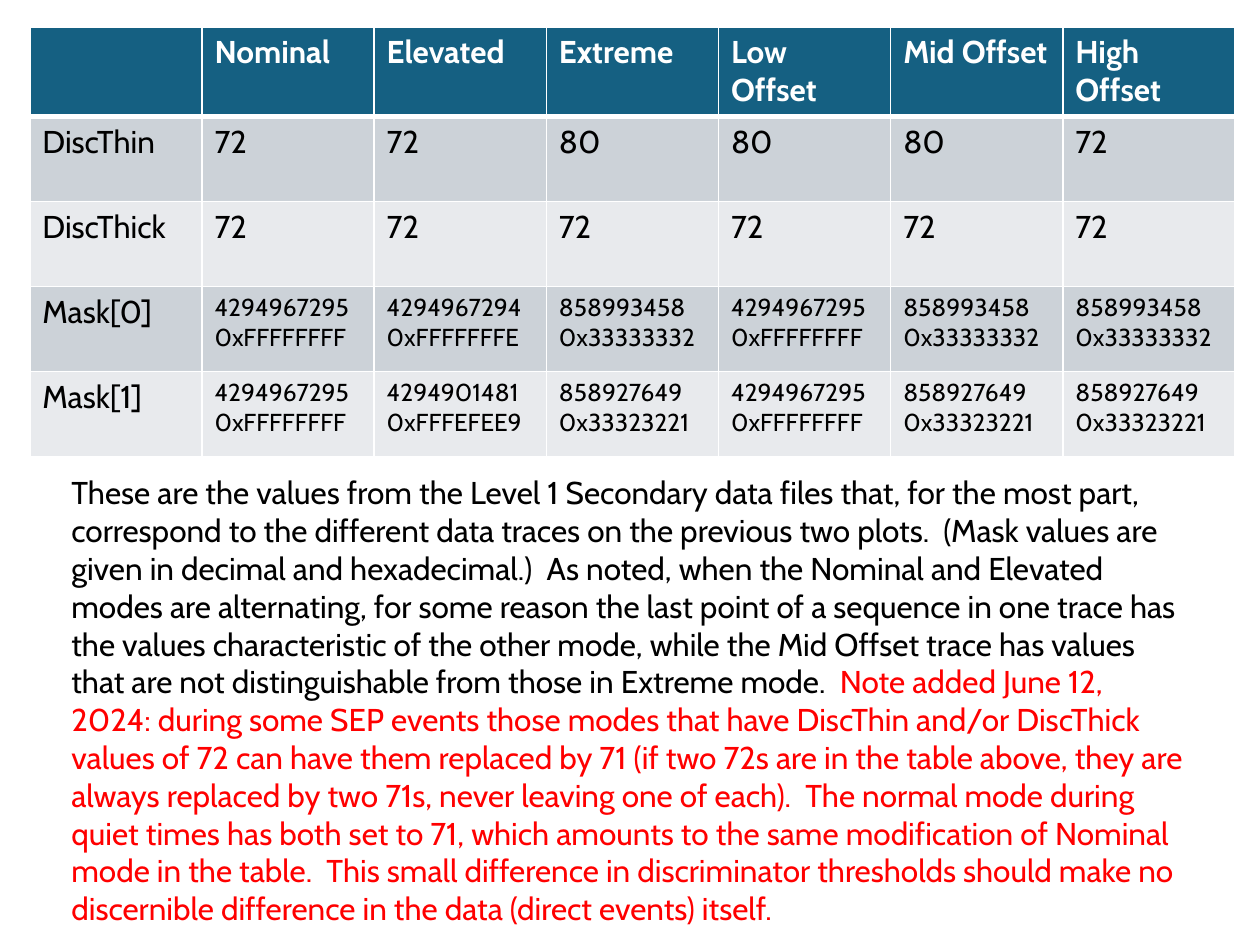
import lxml.etree
import pptx
import pptx.dml.color
import pptx.enum.text
import pptx.oxml.ns
import pptx.util

Cm, Pt = pptx.util.Cm, pptx.util.Pt
RGBColor = pptx.dml.color.RGBColor
qn = pptx.oxml.ns.qn

FONT = "Cabin"
WHITE = RGBColor(0xFF, 0xFF, 0xFF)
BLACK = RGBColor(0x00, 0x00, 0x00)
RED = RGBColor(0xFF, 0x00, 0x00)
HEADER = RGBColor(0x15, 0x60, 0x82)
BANDS = [RGBColor(0xCC, 0xD2, 0xD8), RGBColor(0xE8, 0xEA, 0xED)]

MODES = ["Nominal", "Elevated", "Extreme", "Low Offset", "Mid Offset", "High Offset"]
THRESHOLDS = {
    "DiscThin": [72, 72, 80, 80, 80, 72],
    "DiscThick": [72, 72, 72, 72, 72, 72],
}
MASKS = {
    "Mask[0]": [4294967295, 4294967294, 858993458, 4294967295, 858993458, 858993458],
    "Mask[1]": [4294967295, 4294901481, 858927649, 4294967295, 858927649, 858927649],
}
EXPLANATION = (
    "These are the values from the Level 1 Secondary data files that, for the most part, "
    "correspond to the different data traces on the previous two plots.  (Mask values are "
    "given in decimal and hexadecimal.)  As noted, when the Nominal and Elevated modes are "
    "alternating, for some reason the last point of a sequence in one trace has the values "
    "characteristic of the other mode, while the Mid Offset trace has values that are not "
    "distinguishable from those in Extreme mode.  "
)
ADDED_NOTE = (
    "Note added June 12, 2024: during some SEP events those modes that have DiscThin and/or "
    "DiscThick values of 72 can have them replaced by 71 (if two 72s are in the table above, "
    "they are always replaced by two 71s, never leaving one of each).  The normal mode during "
    "quiet times has both set to 71, which amounts to the same modification of Nominal mode in "
    "the table.  This small difference in discriminator thresholds should make no discernible "
    "difference in the data (direct events) itself."
)


def format_font(font, size, color, bold=False):
    font.name = FONT
    font.size = Pt(size)
    font.bold = bold
    font.color.rgb = color


def set_borders(cell, widths):
    tcPr = cell._tc.get_or_add_tcPr()
    for side, width in zip("LRTB", widths):
        ln = lxml.etree.SubElement(tcPr, qn(f"a:ln{side}"), w=str(Pt(width)))
        fill = lxml.etree.SubElement(ln, qn("a:solidFill"))
        lxml.etree.SubElement(fill, qn("a:srgbClr"), val=str(WHITE))


def fill_cell(cell, text, size, color, bold, fill, widths):
    set_borders(cell, widths)
    cell.fill.solid()
    cell.fill.fore_color.rgb = fill
    cell.text_frame.text = text
    for p in cell.text_frame.paragraphs:
        format_font(p.font, size, color, bold)
        for r in p.runs:
            format_font(r.font, size, color, bold)


def add_mode_table(slide, left, top, width, height):
    rows = [["", *MODES]]
    rows += [[name, *map(str, values)] for name, values in THRESHOLDS.items()]
    rows += [[name, *(f"{v}\n0x{v:08X}" for v in values)] for name, values in MASKS.items()]
    table = slide.shapes.add_table(len(rows), len(rows[0]), left, top, width, height).table
    for i, row in enumerate(rows):
        header = i == 0
        fill = HEADER if header else BANDS[(i - 1) % 2]
        widths = (1, 1, 3 if i == 1 else 1, 3 if header else 1)
        for j, text in enumerate(row):
            size = 14 if "\n" in text else 18
            color = WHITE if header else BLACK
            fill_cell(table.cell(i, j), text, size, color, header, fill, widths)


def add_explanation(slide, left, top, width, height):
    tf = slide.shapes.add_textbox(left, top, width, height).text_frame
    tf.word_wrap = True
    tf.auto_size = pptx.enum.text.MSO_AUTO_SIZE.SHAPE_TO_FIT_TEXT
    p = tf.paragraphs[0]
    for text, color in [(EXPLANATION, BLACK), (ADDED_NOTE, RED)]:
        r = p.add_run()
        r.text = text
        format_font(r.font, 18, color)


def main():
    prs = pptx.Presentation()
    prs.slide_width, prs.slide_height = Cm(25.4), Cm(19.05)
    slide = prs.slides.add_slide(prs.slide_layouts[6])
    add_mode_table(slide, Cm(0.6), Cm(0.54), Cm(24.3), Cm(8.58))
    add_explanation(slide, Cm(1.19), Cm(9.42), Cm(23), Cm(9.5))
    prs.save("out.pptx")


if __name__ == "__main__":
    main()
